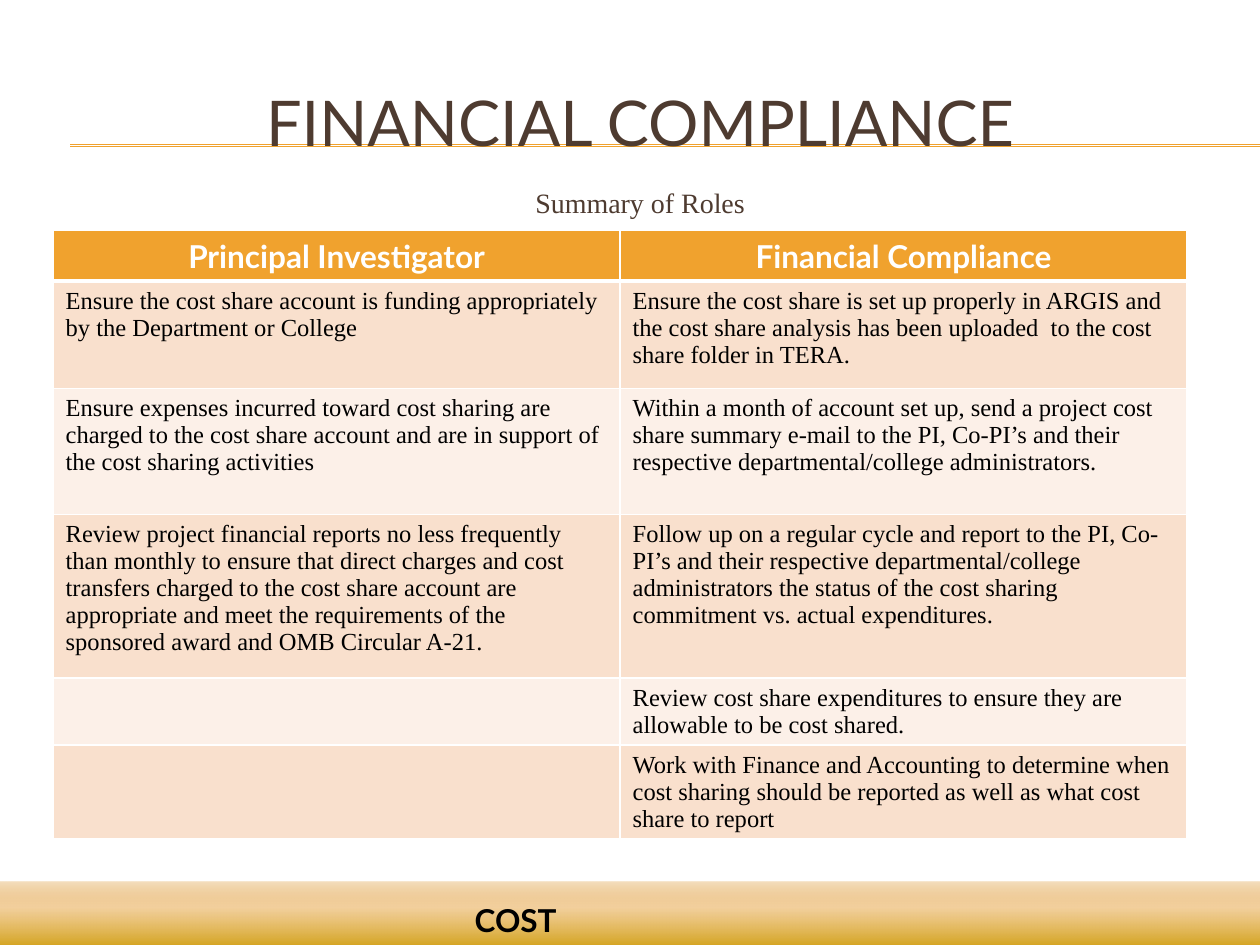
from lxml import etree
from pptx import Presentation
from pptx.dml.color import RGBColor
from pptx.enum.shapes import MSO_CONNECTOR, MSO_SHAPE
from pptx.enum.text import MSO_ANCHOR, MSO_AUTO_SIZE, PP_ALIGN
from pptx.oxml import parse_xml
from pptx.oxml.ns import nsdecls, qn
from pptx.util import Cm, Pt

BROWN = RGBColor(0x4E, 0x3B, 0x30)
ORANGE = RGBColor(0xF0, 0xA2, 0x2E)
PEACH = RGBColor(0xF9, 0xE0, 0xCD)
PALE = RGBColor(0xFC, 0xF0, 0xE8)
WHITE = RGBColor(0xFF, 0xFF, 0xFF)
BLACK = RGBColor(0, 0, 0)
GOLD = RGBColor(0xCC, 0x99, 0x00)
SAND = RGBColor(0xEF, 0xC1, 0x7E)
AMBER = RGBColor(0xD6, 0x80, 0x00)

HEADING_FONT = "Lato"
BODY_FONT = "Times New Roman"
BAND_STOPS = [(0, GOLD, 100), (65, SAND, 75), (100, AMBER, 25)]

ROLES = [
    ("Principal Investigator", "Financial Compliance"),
    ("Ensure the cost share account is funding appropriately by the Department or College",
     "Ensure the cost share is set up properly in ARGIS and the cost share analysis "
     "has been uploaded  to the cost share folder in TERA."),
    ("Ensure expenses incurred toward cost sharing are charged to the cost share account "
     "and are in support of the cost sharing activities",
     "Within a month of account set up, send a project cost share summary e-mail to the PI, "
     "Co-PI’s and their respective departmental/college administrators."),
    ("Review project financial reports no less frequently than monthly to ensure that direct "
     "charges and cost transfers charged to the cost share account are appropriate and meet "
     "the requirements of the sponsored award and OMB Circular A-21.",
     "Follow up on a regular cycle and report to the PI, Co-PI’s and their respective "
     "departmental/college administrators the status of the cost sharing commitment vs. "
     "actual expenditures."),
    ("", "Review cost share expenditures to ensure they are allowable to be cost shared."),
    ("", "Work with Finance and Accounting to determine when cost sharing should be reported "
         "as well as what cost share to report"),
]
ROW_HEIGHTS = [0.94, 2.16, 2.54, 3.3, 1.35, 1.88]
COLUMN_WIDTH = 11.43


def write_text(frame, text, font=BODY_FONT, size=14, color=BLACK, bold=False,
               align=PP_ALIGN.LEFT, bullet=True):
    paragraph = frame.paragraphs[0]
    paragraph.alignment = align
    paragraph.space_before = Pt(0)
    if not bullet:
        properties = paragraph._p.get_or_add_pPr()
        properties.set("marL", "0")
        properties.set("indent", "0")
        etree.SubElement(properties, qn("a:buNone"))
    run = paragraph.add_run()
    run.text = text
    run.font.name = font
    run.font.size = Pt(size)
    run.font.bold = bold
    run.font.color.rgb = color


def add_rule(slide, top):
    rule = slide.shapes.add_connector(
        MSO_CONNECTOR.STRAIGHT, Cm(1.42), Cm(top), Cm(25.4), Cm(top))
    rule.line.color.rgb = ORANGE
    rule.line.width = Pt(0.75)
    etree.SubElement(rule._element.spPr, qn("a:effectLst"))


def add_band(slide):
    band = slide.shapes.add_shape(
        MSO_SHAPE.RECTANGLE, Cm(-0.03), Cm(17.78), Cm(25.48), Cm(1.47))
    band.shadow.inherit = False
    band.line.fill.background()
    stops = "".join(
        f'<a:gs pos="{position * 1000}"><a:srgbClr val="{color}">'
        f'<a:alpha val="{alpha * 1000}"/></a:srgbClr></a:gs>'
        for position, color, alpha in BAND_STOPS)
    gradient = parse_xml(
        f'<a:gradFill {nsdecls("a")} rotWithShape="1"><a:gsLst>{stops}</a:gsLst>'
        '<a:lin ang="16200000" scaled="0"/></a:gradFill>')
    band._element.spPr.find(qn("a:prstGeom")).addnext(gradient)


def fill_placeholder(slide, placeholder, text, top, height, anchor, **text_format):
    placeholder.left, placeholder.top = Cm(0.84), Cm(top)
    placeholder.width, placeholder.height = Cm(24.13), Cm(height)
    frame = placeholder.text_frame
    frame.auto_size = MSO_AUTO_SIZE.NONE
    frame.vertical_anchor = anchor
    write_text(frame, text, color=BROWN, align=PP_ALIGN.CENTER, **text_format)
    slide.shapes._spTree.append(placeholder._element)


def set_borders(cell, bottom):
    properties = cell._tc.get_or_add_tcPr()
    widths = {"lnL": 1, "lnR": 1, "lnT": 1, "lnB": bottom}
    for index, (side, width) in enumerate(widths.items()):
        properties.insert(index, parse_xml(
            f'<a:{side} {nsdecls("a")} w="{Pt(width)}"><a:solidFill>'
            f'<a:srgbClr val="{WHITE}"/></a:solidFill></a:{side}>'))


def add_roles_table(slide):
    table = slide.shapes.add_table(
        len(ROLES), 2, Cm(1.07), Cm(4.65),
        Cm(2 * COLUMN_WIDTH), Cm(sum(ROW_HEIGHTS))).table
    for column in table.columns:
        column.width = Cm(COLUMN_WIDTH)
    for row_index, (row, texts) in enumerate(zip(table.rows, ROLES)):
        row.height = Cm(ROW_HEIGHTS[row_index])
        is_header = row_index == 0
        for cell, text in zip(row.cells, texts):
            cell.fill.solid()
            cell.fill.fore_color.rgb = (
                ORANGE if is_header else PEACH if row_index % 2 else PALE)
            set_borders(cell, bottom=3 if is_header else 1)
            if is_header:
                write_text(cell.text_frame, text, font=HEADING_FONT, size=18,
                           color=WHITE, bold=True, align=PP_ALIGN.CENTER)
            elif text:
                write_text(cell.text_frame, text)


def add_footer_label(slide):
    label = slide.shapes.add_textbox(Cm(9.32), Cm(18.03), Cm(3.99), Cm(1.02))
    label.text_frame.word_wrap = True
    write_text(label.text_frame, "COST", font=HEADING_FONT, size=18, bold=True)


def main():
    presentation = Presentation()
    presentation.slide_width, presentation.slide_height = Cm(25.4), Cm(19.05)
    slide = presentation.slides.add_slide(presentation.slide_layouts[1])
    for top in (2.92, 2.95):
        add_rule(slide, top)
    add_band(slide)
    fill_placeholder(slide, slide.shapes.title, "FINANCIAL COMPLIANCE", 1.27, 2.34,
                     MSO_ANCHOR.MIDDLE, font=HEADING_FONT, size=36)
    fill_placeholder(slide, slide.placeholders[1], "Summary of Roles", 3.61, 13.28,
                     MSO_ANCHOR.TOP, size=16, bullet=False)
    add_roles_table(slide)
    add_footer_label(slide)
    presentation.save("out.pptx")


if __name__ == "__main__":
    main()
